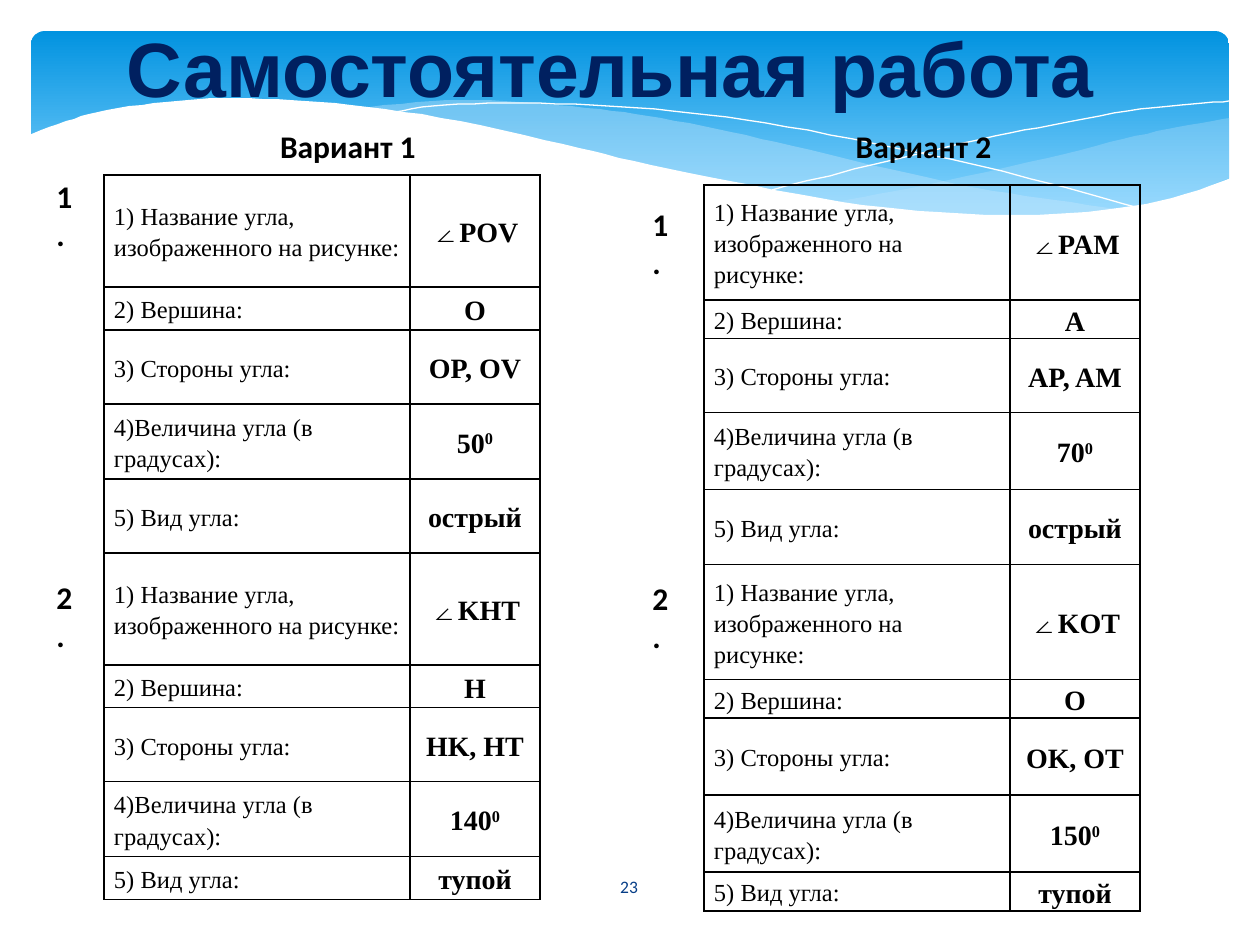
from lxml import etree
from pptx import Presentation
from pptx.dml.color import RGBColor
from pptx.enum.shapes import MSO_SHAPE as Shape
from pptx.enum.text import MSO_ANCHOR as Anchor, MSO_AUTO_SIZE as AutoSize, PP_ALIGN as Align
from pptx.oxml import parse_xml
from pptx.oxml.ns import nsdecls, qn
from pptx.util import Pt

EMU_PER_PX = 914400 / 126
BLACK = "000000"
WHITE = "FFFFFF"
ICE = "C6E7FC"

RIGHT_TOP = [(1230, 118), (1178, 127), (1123, 139), (1048, 158), (949, 180), (890, 192), (833, 202)]
RIGHT_BOTTOM = [(833, 202), (888, 208), (954, 214), (1012, 217), (1076, 214), (1140, 205),
                (1187, 194), (1230, 178)]
MIDDLE_TOP = [(1125, 210), (1055, 200), (977, 188), (890, 169), (793, 146), (717, 129),
              (648, 116), (586, 108), (503, 101), (433, 101), (360, 108)]
MIDDLE_BOTTOM = [(360, 108), (431, 118), (509, 134), (566, 146), (668, 170), (757, 189), (838, 203),
                 (910, 212), (974, 217), (1031, 218), (1080, 215), (1125, 210)]
FALLING_LINE = [(389, 113), (433, 106), (505, 103), (591, 105), (672, 111), (766, 123),
                (876, 144), (1002, 171), (1143, 209)]
RISING_LINE = [(772, 190), (876, 164), (978, 140), (1053, 125), (1128, 111), (1182, 105), (1229, 101)]
WAVE_TOP = [(1231, 178), (1172, 198), (1103, 210), (1019, 215), (937, 212), (842, 202), (730, 181),
            (634, 161), (563, 144), (460, 121), (368, 107), (290, 100), (223, 98), (166, 102),
            (107, 110), (66, 121), (29, 135)]
WAVE_BASE = [(29, 282), (1231, 282)]

QUESTIONS = ["1) Название угла, изображенного на рисунке:", "2) Вершина:", "3) Стороны угла:",
             "4)Величина угла (в градусах):", "5) Вид угла:"]
ANSWERS_1 = ["∠POV", "O", "OP, OV", "50^0", "острый", "∠KHT", "H", "HK, HT", "140^0", "тупой"]
ANSWERS_2 = ["∠PAM", "A", "AP, AM", "70^0", "острый", "∠KOT", "O", "OK, OT", "150^0", "тупой"]
HEIGHTS_1 = [112, 43, 74, 75, 74, 112, 43, 74, 75, 43]
HEIGHTS_2 = [115, 38, 74, 77, 75, 115, 38, 77, 77, 38]


def px(length):
    return round(length * EMU_PER_PX)


def box(*lengths):
    return [px(length) for length in lengths]


def color(value):
    return RGBColor.from_string(value)


def smooth(points, steps=5):
    padded = [points[0], *points, points[-1]]
    curve = [points[0]]
    for a, b, c, d in zip(padded, padded[1:], padded[2:], padded[3:]):
        for step in range(1, steps + 1):
            t = step / steps
            curve.append(tuple(
                (2 * q + (r - p) * t + (2 * p - 5 * q + 4 * r - s) * t ** 2
                 + (3 * q - p - 3 * r + s) * t ** 3) / 2
                for p, q, r, s in zip(a, b, c, d)))
    return curve


class SlideBuilder:
    """Draws styled elements on one slide."""

    label_font = "Calibri"
    table_font = "Times New Roman"

    def __init__(self, slide):
        self.slide = slide
        self.shapes = slide.shapes

    def format_paragraph(self, paragraph, font, size, fill=BLACK, bold=False, align=Align.LEFT):
        paragraph.alignment = align
        for run in paragraph.runs:
            run.font.name = font
            run.font.size = Pt(size)
            run.font.bold = bold
            run.font.color.rgb = color(fill)

    def title(self, text, *bounds):
        title = self.shapes.title
        title.element.getparent().append(title.element)
        title.left, title.top, title.width, title.height = box(*bounds)
        frame = title.text_frame
        frame.text = text
        frame.auto_size = AutoSize.NONE
        frame.vertical_anchor = Anchor.MIDDLE
        self.format_paragraph(frame.paragraphs[0], "Arial", 44, "002060", True, Align.CENTER)

    def banner(self, *bounds):
        shape = self.shapes.add_shape(Shape.ROUNDED_RECTANGLE, *box(*bounds))
        shape.adjustments[0] = 0.07
        shape.shadow.inherit = False
        shape.line.fill.background()
        shape.fill.gradient()
        shape.fill.gradient_angle = 270
        for stop, position, value in zip(shape.fill.gradient_stops, (0, 0.9), ("0293E0", "83D3FE")):
            stop.position = position
            stop.color.rgb = color(value)

    def outline(self, points, close):
        builder = self.shapes.build_freeform(*points[0], scale=EMU_PER_PX)
        builder.add_line_segments(points[1:], close=close)
        shape = builder.convert_to_shape()
        shape.shadow.inherit = False
        return shape

    def ribbon(self, points, fill, opacity=100):
        shape = self.outline(points, True)
        shape.line.fill.background()
        shape.fill.solid()
        shape.fill.fore_color.rgb = color(fill)
        if opacity < 100:
            value = shape.element.spPr.find(qn("a:solidFill"))[0]
            etree.SubElement(value, qn("a:alpha")).set("val", str(opacity * 1000))

    def curve(self, points):
        shape = self.outline(smooth(points), False)
        shape.fill.background()
        shape.line.color.rgb = color(WHITE)
        shape.line.width = Pt(0)

    def label(self, text, *bounds, size=18, fill=BLACK, bold=True, align=Align.LEFT, anchor=Anchor.TOP):
        frame = self.shapes.add_textbox(*box(*bounds)).text_frame
        frame.text = text
        frame.word_wrap = align == Align.CENTER
        frame.vertical_anchor = anchor
        self.format_paragraph(frame.paragraphs[0], self.label_font, size, fill, bold, align)

    def cell(self, cell, text, size, bold, align, margin_right):
        base, _, power = text.partition("^")
        cell.vertical_anchor = Anchor.MIDDLE
        cell.margin_left, cell.margin_right = px(10), px(margin_right)
        cell.margin_top = cell.margin_bottom = 0
        paragraph = cell.text_frame.paragraphs[0]
        paragraph.text = base
        paragraph.line_spacing = 1.15
        if power:
            run = paragraph.add_run()
            run.text = power
            run.font._element.set("baseline", "30000")
        self.format_paragraph(paragraph, self.table_font, size, bold=bold, align=align)
        properties = cell._tc.get_or_add_tcPr()
        for side in "LRTB":
            properties.append(parse_xml(
                f'<a:ln{side} {nsdecls("a")} w="{Pt(1)}"><a:solidFill>'
                f'<a:srgbClr val="{BLACK}"/></a:solidFill></a:ln{side}>'))
        cell.fill.background()

    def table(self, left, top, answers, heights, margin_right):
        widths = (306, 130)
        frame = self.shapes.add_table(len(answers), 2, *box(left, top, sum(widths), sum(heights)))
        table = frame.table
        table.first_row = table.horz_banding = False
        for column, width in zip(table.columns, widths):
            column.width = px(width)
        for index, (answer, height) in enumerate(zip(answers, heights)):
            table.rows[index].height = px(height)
            question = QUESTIONS[index % len(QUESTIONS)]
            self.cell(table.cell(index, 0), question, 14, False, Align.LEFT, margin_right)
            self.cell(table.cell(index, 1), answer, 16, True, Align.CENTER, 10)


def main():
    presentation = Presentation()
    presentation.slide_width, presentation.slide_height = box(1260, 945)
    builder = SlideBuilder(presentation.slides.add_slide(presentation.slide_layouts[5]))

    builder.banner(31, 31, 1198, 197)
    builder.ribbon(smooth(RIGHT_TOP) + smooth(RIGHT_BOTTOM), ICE, 29)
    builder.ribbon(smooth(MIDDLE_TOP) + smooth(MIDDLE_BOTTOM), ICE, 40)
    builder.curve(FALLING_LINE)
    builder.curve(RISING_LINE)
    builder.ribbon(smooth(WAVE_TOP) + WAVE_BASE, WHITE)
    builder.title("Самостоятельная работа", 44, 13, 1134, 108)

    builder.table(104, 175, ANSWERS_1, HEIGHTS_1, 8)
    builder.label("Вариант 1", 184, 121, 328, 50, align=Align.CENTER)
    builder.label("Вариант 2", 730, 121, 387, 50, align=Align.CENTER)
    builder.table(704, 185, ANSWERS_2, HEIGHTS_2, 15)
    for text, left, top in (("1.", 44, 171), ("2.", 44, 572), ("1.", 640, 199), ("2.", 640, 573)):
        builder.label(text, left, top, 49, 50)
    builder.label("23", 549, 862, 160, 50, size=10, fill="073E87", bold=False,
                  align=Align.CENTER, anchor=Anchor.MIDDLE)

    presentation.save("out.pptx")


if __name__ == "__main__":
    main()
